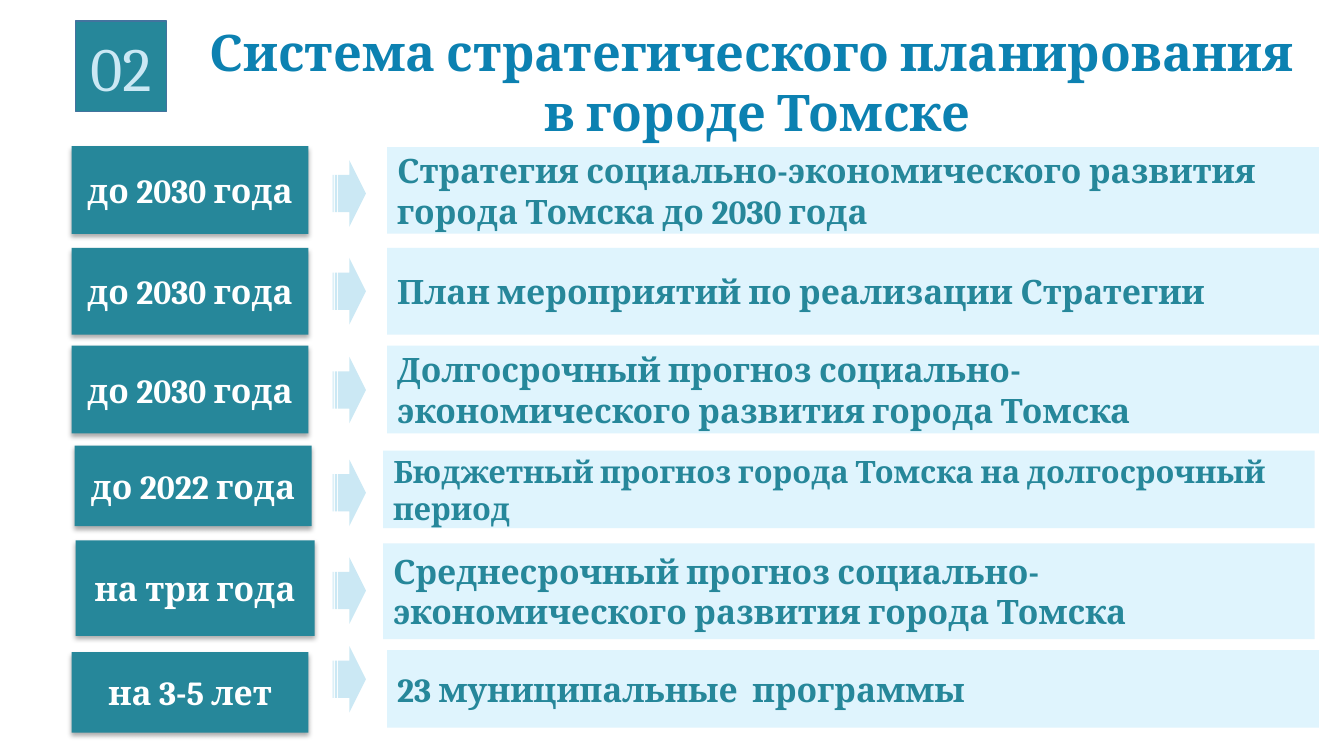
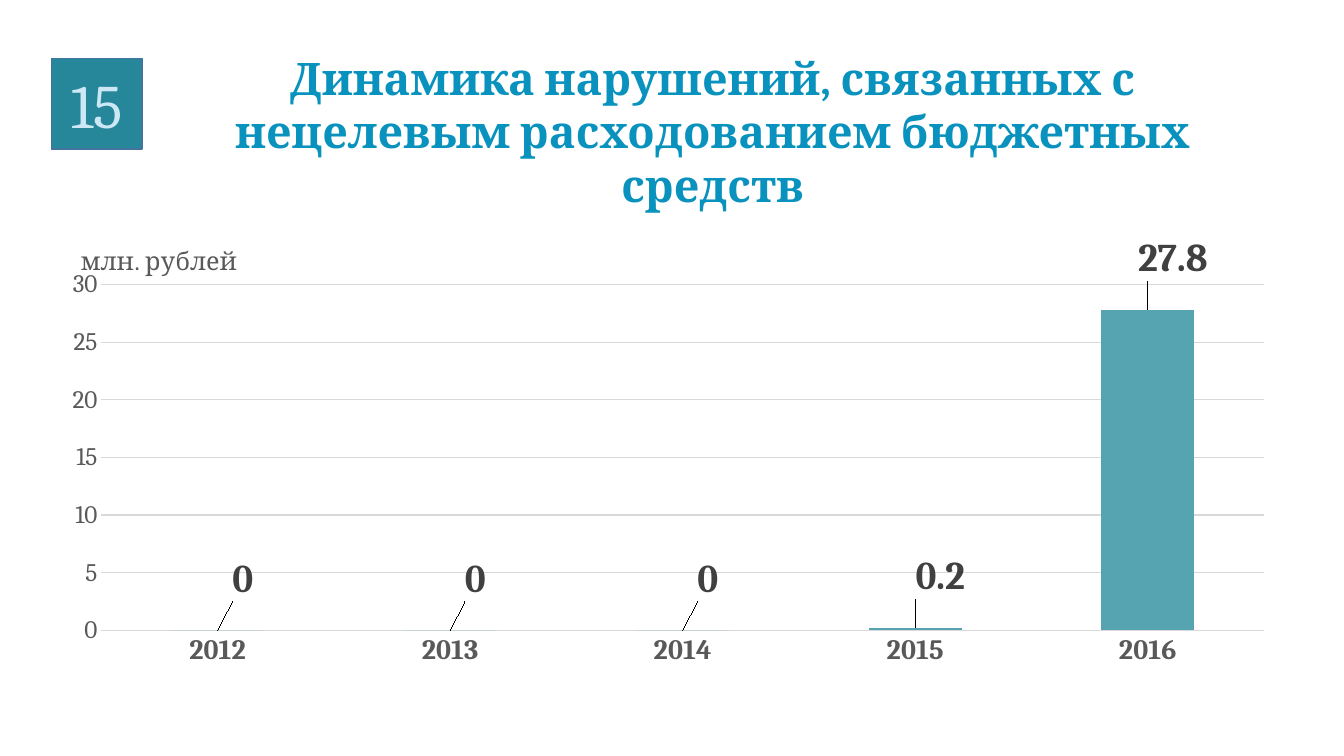
from lxml.etree import SubElement
from pptx import Presentation
from pptx.chart.data import CategoryChartData
from pptx.dml.color import RGBColor
from pptx.enum.chart import XL_CHART_TYPE, XL_LABEL_POSITION, XL_TICK_MARK
from pptx.enum.shapes import MSO_SHAPE
from pptx.enum.text import MSO_ANCHOR, PP_ALIGN
from pptx.oxml.ns import qn
from pptx.util import Inches, Pt

HUES = {
    "teal": "26879A", "pale": "DFF4FD", "sky": "CBE8F4", "edge": "43739E",
    "white": "FFFFFF", "blue": "0C81B1", "azure": "0892BD", "bar": "56A3B2",
    "grey": "595959", "dark": "404040", "grid": "D9D9D9",
}
FACE = "Cambria"


def hue(name):
    return RGBColor.from_string(HUES[name])


def place(parent, index, pairs):
    layout = parent.find(qn("c:layout"))
    if layout is None:
        layout = SubElement(parent, qn("c:layout"))
        parent.insert(index, layout)
    manual = SubElement(layout, qn("c:manualLayout"))
    for tag, val in pairs:
        SubElement(manual, qn("c:" + tag)).set("val", str(val))


class Deck:
    """Holds the shared style and the current slide."""

    def __init__(self):
        self.show = Presentation()
        self.show.slide_width = Inches(13.33)
        self.show.slide_height = Inches(7.5)
        self.slide = None

    def page(self):
        self.slide = self.show.slides.add_slide(self.show.slide_layouts[6])

    def font(self, font, size, color, bold=False):
        font.name, font.size, font.bold = FACE, Pt(size), bold
        font.color.rgb = hue(color)

    def label(self, frame, lines, size, color, bold=True, align=PP_ALIGN.CENTER):
        frame.word_wrap = True
        for i, line in enumerate(lines):
            para = frame.add_paragraph() if i else frame.paragraphs[0]
            para.alignment = align
            run = para.add_run()
            run.text = line
            self.font(run.font, size, color, bold)

    def title(self, box, lines, size, color):
        shape = self.slide.shapes.add_textbox(*map(Inches, box))
        self.label(shape.text_frame, lines, size, color)

    def block(self, box, fill, kind=MSO_SHAPE.RECTANGLE):
        shape = self.slide.shapes.add_shape(kind, *map(Inches, box))
        shape.shadow.inherit = False
        shape.fill.solid()
        shape.fill.fore_color.rgb = hue(fill)
        shape.line.fill.background()
        shape.text_frame.vertical_anchor = MSO_ANCHOR.MIDDLE
        return shape

    def badge(self, left, top, text):
        shape = self.block((left, top, 0.9, 0.9), "teal")
        shape.line.color.rgb = hue("edge")
        shape.line.width = Pt(1)
        self.label(shape.text_frame, [text], 44, "sky", False)

    def term(self, box, text):
        shape = self.block(box, "teal")
        glow = shape._element.spPr.find(qn("a:effectLst"))
        cast = SubElement(glow, qn("a:outerShdw"), blurRad=str(Pt(3.5)),
                          dist=str(Pt(2.2)), dir="5400000", rotWithShape="0")
        tint = SubElement(cast, qn("a:srgbClr"), val="000000")
        SubElement(tint, qn("a:alpha"), val="32000")
        self.label(shape.text_frame, [text], 24, "white")

    def plan(self, box, text, size):
        shape = self.block(box, "pale")
        self.label(shape.text_frame, [text], size, "teal", align=PP_ALIGN.LEFT)

    def arrow(self, top):
        shape = self.block((3.3, top, 0.33, 0.66), "sky",
                           MSO_SHAPE.STRIPED_RIGHT_ARROW)
        shape.adjustments[0] = 0.56
        shape.adjustments[1] = 0.5

    def chart(self, box, cats, vals, unit):
        data = CategoryChartData()
        data.categories = cats
        data.add_series("Series 1", vals)
        chart = self.slide.shapes.add_chart(
            XL_CHART_TYPE.COLUMN_CLUSTERED, *map(Inches, box), data).chart
        chart.has_legend = chart.has_title = False
        self.font(chart.font, 18, "grey")
        self.axes(chart, unit)
        plot = chart.plots[0]
        plot.gap_width, plot.vary_by_categories = 150, False
        bars = plot.series[0]
        bars.format.fill.solid()
        bars.format.fill.fore_color.rgb = hue("bar")
        for i in range(len(vals)):
            label = bars.points[i].data_label
            self.font(label.font, 28, "dark", True)
            label.position = XL_LABEL_POSITION.OUTSIDE_END
        for item in bars._element.iter(qn("c:dLbl")):
            place(item, 1, [("x", 0.02), ("y", -0.05)])
        area = chart._chartSpace.chart.plotArea
        place(area, 0, [("layoutTarget", "inner"), ("xMode", "edge"),
                        ("yMode", "edge"), ("x", 0.04), ("y", 0.17),
                        ("w", 0.93), ("h", 0.7)])

    def axes(self, chart, unit):
        base, side = chart.category_axis, chart.value_axis
        for axis, size, bold in ((base, 20, True), (side, 18, False)):
            self.font(axis.tick_labels.font, size, "grey", bold)
            axis.major_tick_mark = axis.minor_tick_mark = XL_TICK_MARK.NONE
            axis.format.line.fill.background()
        side.minimum_scale, side.maximum_scale, side.major_unit = 0, 30, 5
        grid = side.major_gridlines.format.line
        grid.color.rgb = hue("grid")
        grid.width = Pt(0.75)
        head = side.axis_title
        run = head.text_frame.paragraphs[0].add_run()
        run.text = unit
        self.font(run.font, 18, "grey")
        turn = head._element.find(".//" + qn("a:bodyPr"))
        turn.set("rot", "0")
        turn.set("vert", "horz")
        place(head._element, 1, [("xMode", "edge"), ("yMode", "edge"),
                                 ("x", 0.02), ("y", 0.08)])


ROWS = [
    ("до 2030 года", (0.71, 1.45, 2.35, 0.87), 1.59,
     "Стратегия социально-экономического развития города Томска до 2030 года",
     (3.84, 1.46, 9.24, 0.86), 24),
    ("до 2030 года", (0.71, 2.46, 2.35, 0.86), 2.56,
     "План мероприятий по реализации Стратегии",
     (3.84, 2.46, 9.24, 0.86), 24),
    ("до 2030 года", (0.71, 3.43, 2.35, 0.87), 3.54,
     "Долгосрочный прогноз социально-экономического развития города Томска",
     (3.84, 3.43, 9.24, 0.87), 24),
    ("до 2022 года", (0.74, 4.42, 2.35, 0.8), 4.56,
     "Бюджетный прогноз города Томска на долгосрочный период",
     (3.8, 4.47, 9.24, 0.77), 22),
    ("на три года", (0.75, 5.36, 2.37, 0.95), 5.53,
     "Среднесрочный прогноз социально-экономического развития города Томска",
     (3.8, 5.39, 9.24, 0.95), 24),
    ("на 3-5 лет", (0.71, 6.47, 2.35, 0.8), 6.41,
     "23 муниципальные  программы",
     (3.84, 6.45, 9.24, 0.77), 24),
]


def main():
    deck = Deck()
    deck.page()
    deck.title((1.89, 0.16, 11.24, 1.31),
               ["Система стратегического планирования ", "в городе Томске"],
               36, "blue")
    deck.badge(0.75, 0.21, "02")
    for term, left, top, plan, right, size in ROWS:
        deck.term(left, term)
        deck.arrow(top)
        deck.plan(right, plan, size)

    deck.page()
    deck.badge(0.51, 0.58, "15")
    deck.title((1.73, 0.45, 10.68, 1.18),
               ["Динамика нарушений, связанных с нецелевым расходованием "
                "бюджетных средств"], 32, "azure")
    deck.chart((0.51, 1.99, 12.4, 4.9),
               ["2012", "2013", "2014", "2015", "2016"],
               [0, 0, 0, 0.2, 27.8], "млн. рублей")
    deck.show.save("out.pptx")


if __name__ == "__main__":
    main()
